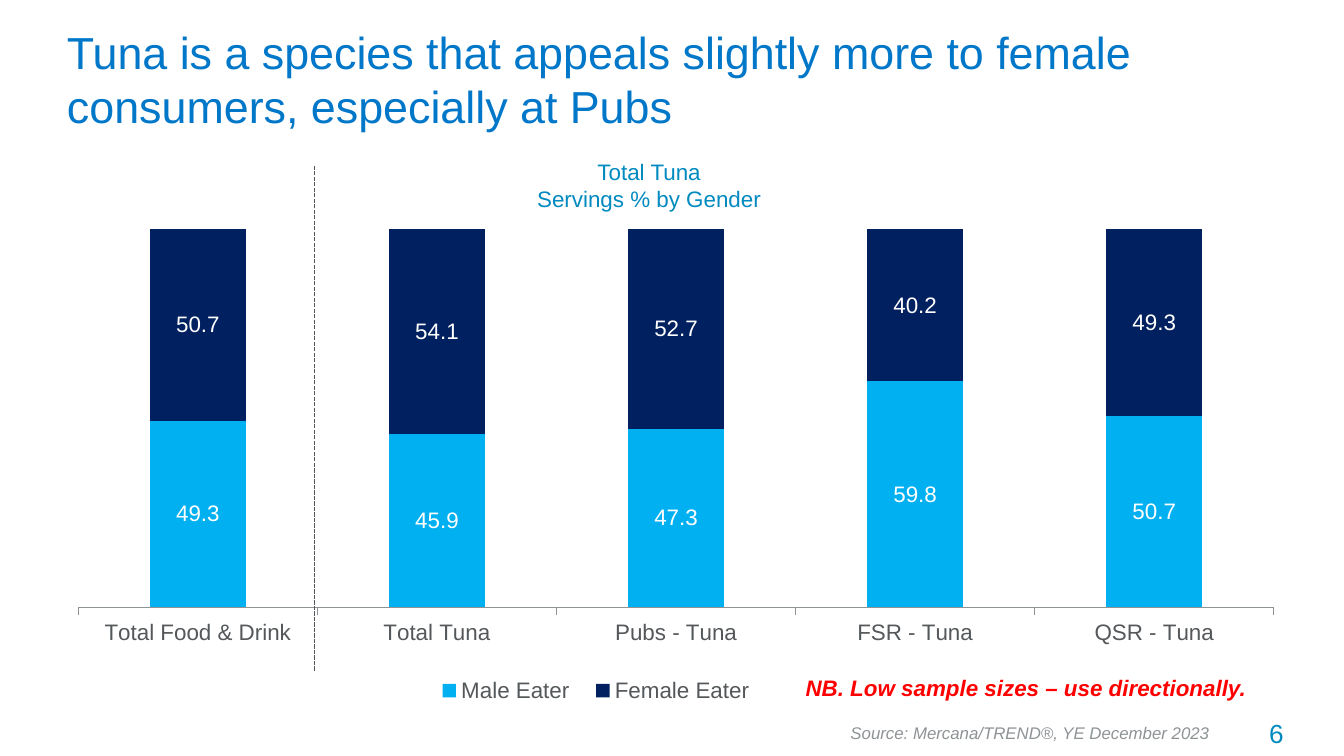
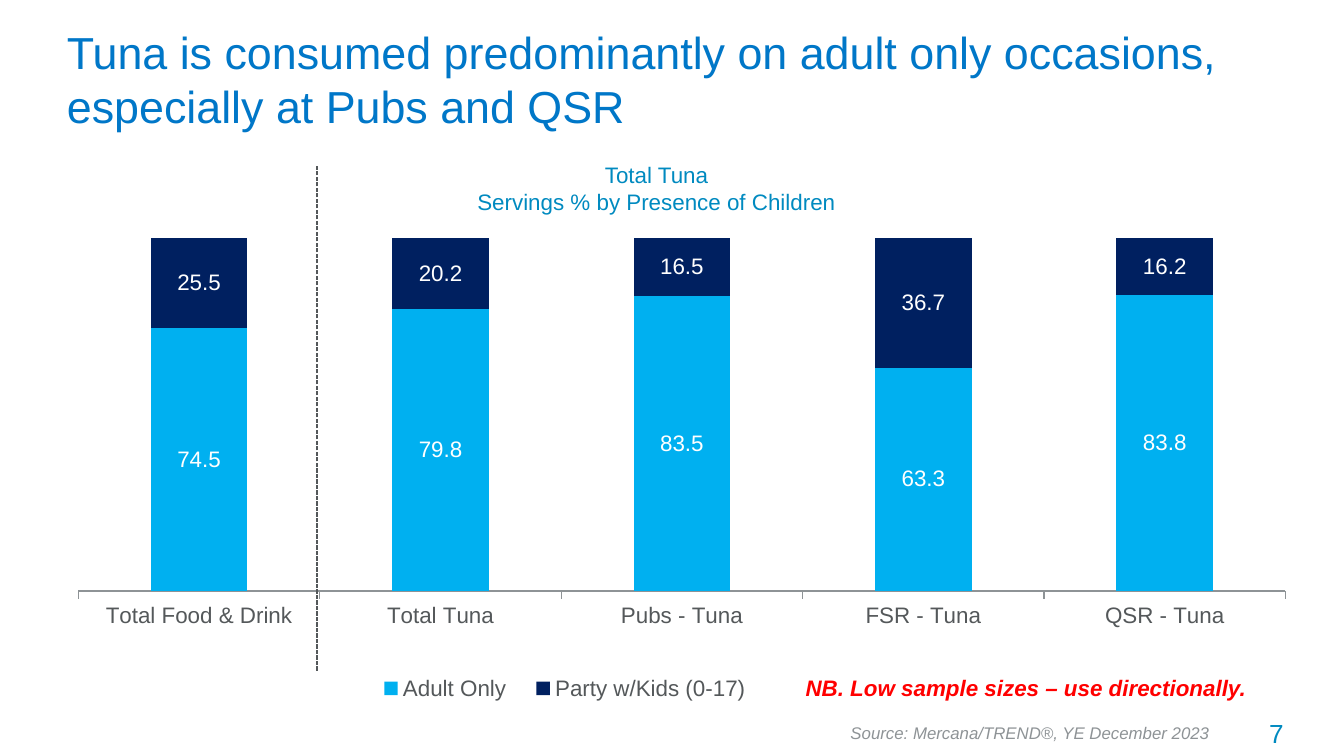
from lxml import etree
from pptx import Presentation
from pptx import util as u
from pptx.chart.data import CategoryChartData
from pptx.dml.color import RGBColor
from pptx.enum import chart as charts, dml, shapes, text
from pptx.oxml.ns import qn

PX = 9144
FONT = "Arial"
TITLE_BLUE = RGBColor(0x00, 0x77, 0xC8)
TEAL = RGBColor(0x00, 0x8A, 0xC0)
SKY = RGBColor(0x00, 0xB0, 0xF0)
NAVY = RGBColor(0x00, 0x20, 0x60)
SLATE = RGBColor(0x54, 0x58, 0x5A)
GREY = RGBColor(0x8E, 0x93, 0x96)
RED = RGBColor(0xFF, 0x00, 0x00)
WHITE = RGBColor(0xFF, 0xFF, 0xFF)

NOTE = "NB. Low sample sizes – use directionally."
SOURCE = "Source: Mercana/TREND®, YE December 2023"
CATEGORIES = ["Total Food & Drink", "Total Tuna", "Pubs - Tuna", "FSR - Tuna", "QSR - Tuna"]

SLIDES = [
    {
        "title": "Tuna is a species that appeals slightly more to female consumers, especially at Pubs",
        "subtitle": "Total Tuna\nServings % by Gender",
        "subtitle_box": (389, 113, 188, 50),
        "chart_box": (40, 152, 917, 375),
        "plot": {"x": 0.02, "y": 0.05, "w": 0.97, "h": 0.75},
        "legend": {"x": 0.3, "y": 0.93, "w": 0.28, "h": 0.07},
        "divider": 234,
        "number": "6",
        "series": {
            "Male Eater": (49.3, 45.9, 47.3, 59.8, 50.7),
            "Female Eater": (50.7, 54.1, 52.7, 40.2, 49.3),
        },
    },
    {
        "title": "Tuna is consumed predominantly on adult only occasions, especially at Pubs and QSR",
        "subtitle": "Total Tuna\nServings % by Presence of Children",
        "subtitle_box": (344, 115, 289, 50),
        "chart_box": (40, 134, 917, 392),
        "plot": {"x": 0.02, "y": 0.11, "w": 0.98, "h": 0.67},
        "legend": {"x": 0.25, "y": 0.93, "w": 0.33, "h": 0.07},
        "divider": 236,
        "number": "7",
        "series": {
            "Adult Only": (74.5, 79.8, 83.5, 63.3, 83.8),
            "Party w/Kids (0-17)": (25.5, 20.2, 16.5, 36.7, 16.2),
        },
    },
]


def add_text(slide, box, content, size, color, align=text.PP_ALIGN.LEFT,
             bold=False, italic=False, wrap=True, anchor=text.MSO_ANCHOR.TOP):
    shape = slide.shapes.add_textbox(*(value * PX for value in box))
    shape.text_frame.text = content
    shape.text_frame.word_wrap = wrap
    shape.text_frame.vertical_anchor = anchor
    for paragraph in shape.text_frame.paragraphs:
        paragraph.alignment = align
        for run in paragraph.runs:
            run.font.name = FONT
            run.font.size = u.Pt(size)
            run.font.bold = bold
            run.font.italic = italic
            run.font.color.rgb = color


def set_layout(parent, index, fractions, inner=False):
    for old_layout in parent.findall(qn("c:layout")):
        parent.remove(old_layout)
    layout = etree.Element(qn("c:layout"))
    manual = etree.SubElement(layout, qn("c:manualLayout"))
    if inner:
        etree.SubElement(manual, qn("c:layoutTarget")).set("val", "inner")
    for side in "xy":
        etree.SubElement(manual, qn(f"c:{side}Mode")).set("val", "edge")
    for side, fraction in fractions.items():
        etree.SubElement(manual, qn(f"c:{side}")).set("val", str(fraction))
    parent.insert(index, layout)


presentation = Presentation()
presentation.slide_width = 1000 * PX
presentation.slide_height = presentation.slide_width * 9 // 16

for content in SLIDES:
    slide = presentation.slides.add_slide(presentation.slide_layouts[6])

    data = CategoryChartData(number_format="0.0")
    data.categories = CATEGORIES
    for name, values in content["series"].items():
        data.add_series(name, values)
    chart = slide.shapes.add_chart(
        charts.XL_CHART_TYPE.COLUMN_STACKED_100,
        *(value * PX for value in content["chart_box"]), data).chart
    chart.has_title = False
    chart.font.name = FONT
    chart.font.size = u.Pt(12)
    chart.font.color.rgb = SLATE

    plot = chart.plots[0]
    plot.gap_width = 150
    plot.overlap = 100
    plot.vary_by_categories = False
    for series, color in zip(plot.series, (SKY, NAVY)):
        series.format.fill.solid()
        series.format.fill.fore_color.rgb = color
        labels = series.data_labels
        labels.show_value = True
        labels.number_format = "#,##0.0"
        labels.number_format_is_linked = False
        labels.font.name = FONT
        labels.font.size = u.Pt(12)
        labels.font.color.rgb = WHITE

    chart.value_axis.visible = False
    chart.value_axis.has_major_gridlines = False
    chart.category_axis.major_tick_mark = charts.XL_TICK_MARK.OUTSIDE
    chart.category_axis.format.line.color.rgb = GREY
    chart.category_axis.format.line.width = u.Pt(0.75)

    chart.has_legend = True
    chart.legend.position = charts.XL_LEGEND_POSITION.BOTTOM
    chart.legend.include_in_layout = False
    set_layout(chart.legend._element, 1, content["legend"])
    set_layout(chart._chartSpace.chart.plotArea, 0, content["plot"], inner=True)

    add_text(slide, content["subtitle_box"], content["subtitle"], 12, TEAL,
             align=text.PP_ALIGN.CENTER, wrap=False)

    divider = slide.shapes.add_connector(
        shapes.MSO_CONNECTOR.STRAIGHT,
        content["divider"] * PX, 499 * PX, content["divider"] * PX, 123 * PX)
    divider.line.color.rgb = SLATE
    divider.line.width = u.Pt(0.75)
    divider.line.dash_style = dml.MSO_LINE.SQUARE_DOT
    etree.SubElement(divider._element.spPr, qn("a:effectLst"))

    add_text(slide, (885, 529, 80, 34), content["number"], 14, TEAL, align=text.PP_ALIGN.RIGHT)
    add_text(slide, (40, 23, 917, 71), content["title"], 24, TITLE_BLUE,
             anchor=text.MSO_ANCHOR.MIDDLE)
    add_text(slide, (570, 497, 387, 30), NOTE, 12, RED,
             align=text.PP_ALIGN.CENTER, bold=True, italic=True)
    add_text(slide, (623, 533, 290, 25), SOURCE, 9, GREY, italic=True)

presentation.save("out.pptx")
